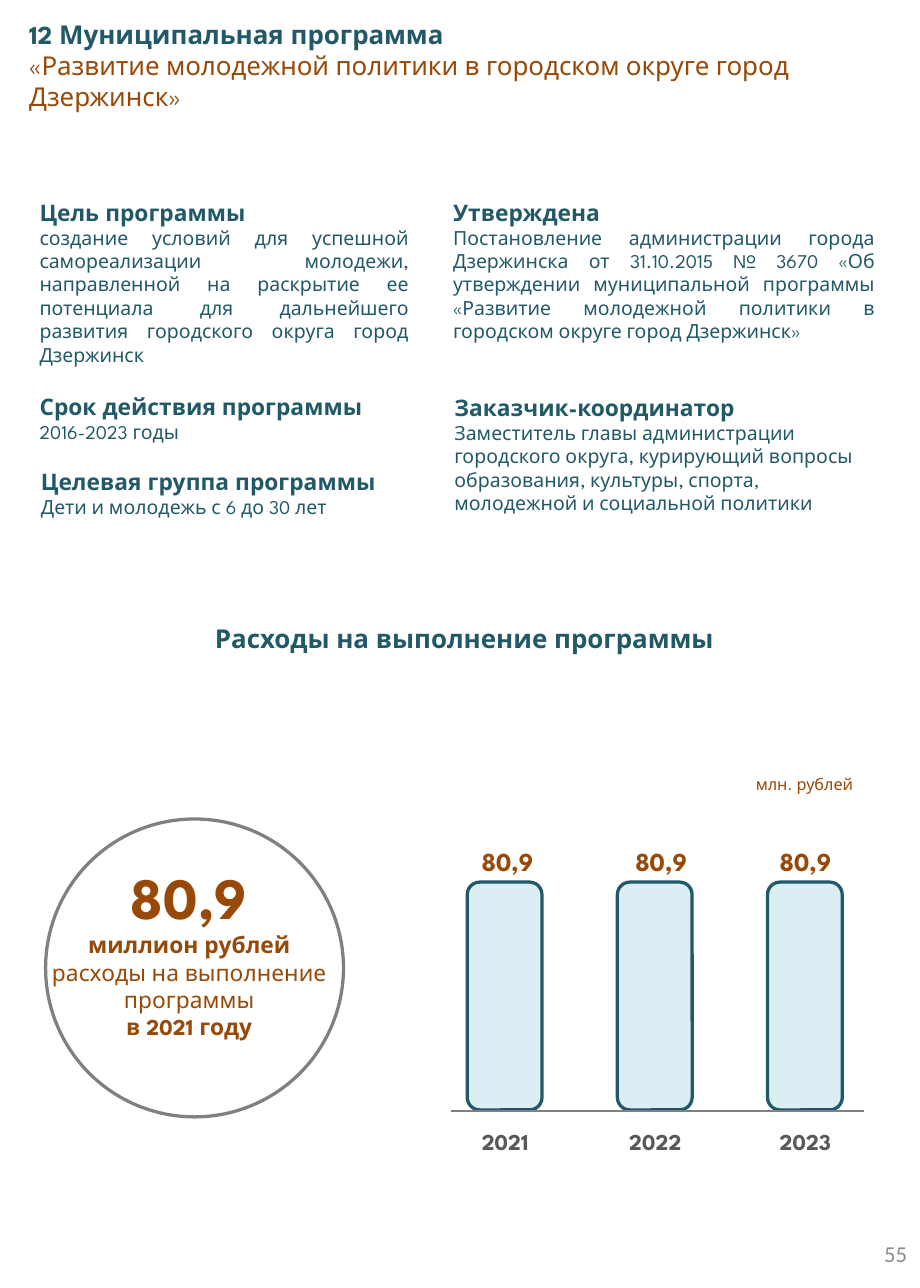
from pptx import Presentation
from pptx.dml.color import RGBColor
from pptx.enum.shapes import MSO_CONNECTOR, MSO_SHAPE
from pptx.enum.text import MSO_ANCHOR, PP_ALIGN
from pptx.oxml.ns import qn
from pptx.util import Inches, Pt

LEFT, CENTER, RIGHT, JUSTIFY = PP_ALIGN.LEFT, PP_ALIGN.CENTER, PP_ALIGN.RIGHT, PP_ALIGN.JUSTIFY
TOP, MIDDLE = MSO_ANCHOR.TOP, MSO_ANCHOR.MIDDLE
OVAL, ROUNDED = MSO_SHAPE.OVAL, MSO_SHAPE.ROUNDED_RECTANGLE
STRAIGHT = MSO_CONNECTOR.STRAIGHT

SLIDE_WIDTH, SLIDE_HEIGHT = Pt(567), Pt(793.75)
TEAL, BROWN, GRAY, DARK_GRAY, PALE = "215968", "984807", "808080", "595959", "DBEEF4"
PAGE_GRAY = "8C8C8C"
HEADING_FONT, PAGE_FONT = "League Spartan", "Calibri"
NARROW, WIDE = (0.1, 0.05), (0.11, 0.06)
LEFT_COLUMN, RIGHT_COLUMN = 0.24, 3.78
UPPER_ROW, LOWER_ROW, GROUP_ROW = 1.65, 3.31, 3.94


def color(hex_value):
    return RGBColor.from_string(hex_value)


def add_text(slide, box, lines, align=LEFT, insets=NARROW, anchor=TOP, font=HEADING_FONT):
    """Each line is (text, size, color, bold)."""
    shape = slide.shapes.add_textbox(*map(Inches, box))
    frame = shape.text_frame
    frame.word_wrap = True
    frame.vertical_anchor = anchor
    frame.margin_left = frame.margin_right = Inches(insets[0])
    frame.margin_top = frame.margin_bottom = Inches(insets[1])
    for index, (text, size, hex_value, bold) in enumerate(lines):
        paragraph = frame.add_paragraph() if index else frame.paragraphs[0]
        paragraph.text = text
        paragraph.alignment = align
        paragraph.font.name = font
        paragraph.font.size = Pt(size)
        paragraph.font.bold = bold
        paragraph.font.color.rgb = color(hex_value)


def add_outlined(slide, kind, box, line, fill=None):
    shape = slide.shapes.add_shape(kind, *map(Inches, box))
    shape.shadow.inherit = False
    if fill:
        shape.fill.solid()
        shape.fill.fore_color.rgb = color(fill)
    else:
        shape.fill.background()
    shape.line.color.rgb = color(line)
    shape.line.width = Pt(2)


def add_section(slide, box, heading, body, align=LEFT, insets=NARROW):
    add_text(slide, box, [(heading, 14, TEAL, True), (body, 12, TEAL, False)], align, insets)


def add_program_details(slide):
    add_section(slide, (LEFT_COLUMN, UPPER_ROW, 3.36, 1.55), "Цель программы",
                "создание условий для успешной самореализации молодежи, направленной "
                "на раскрытие ее потенциала для дальнейшего развития городского округа "
                "город Дзержинск", JUSTIFY)
    add_section(slide, (RIGHT_COLUMN, UPPER_ROW, 3.81, 1.35), "Утверждена",
                "Постановление администрации города Дзержинска от 31.10.2015 № 3670 "
                "«Об утверждении муниципальной программы «Развитие молодежной политики "
                "в городском округе город Дзержинск»", JUSTIFY)
    add_section(slide, (LEFT_COLUMN, LOWER_ROW, 2.96, 0.54), "Срок действия программы",
                "2016-2023 годы", JUSTIFY)
    add_section(slide, (RIGHT_COLUMN, LOWER_ROW, 3.86, 1.02), "Заказчик-координатор",
                "Заместитель главы администрации городского округа, курирующий вопросы "
                "образования, культуры, спорта, молодежной и социальной политики",
                insets=WIDE)
    add_section(slide, (LEFT_COLUMN, GROUP_ROW, 3.23, 0.55), "Целевая группа программы",
                "Дети и молодежь с 6 до 30 лет", insets=WIDE)


def add_total(slide, left, top, diameter):
    add_outlined(slide, OVAL, (left, top, diameter, diameter), GRAY)
    add_text(slide, (left - 0.39, top + 0.31, diameter + 0.69, 1.7), [
        ("80,9", 36, BROWN, True),
        ("миллион рублей", 14, BROWN, True),
        ("расходы на выполнение программы", 14, BROWN, False),
        ("в 2021 году", 14, BROWN, True),
    ], CENTER)


def add_spending_bars(slide, left, top, width, height):
    """The box spans the axis line and the full bar height."""
    bar_width, label_width = 0.64, 0.81
    years = [("2021", "80,9", 0.02), ("2022", "80,9", 0.05), ("2023", "80,9", 0)]
    pitch = 2.57 / (len(years) - 1)
    for index, (year, value, value_shift) in enumerate(years):
        bar_left = left + 0.14 + index * pitch
        label_left = bar_left - 0.08
        add_outlined(slide, ROUNDED, (bar_left, top, bar_width, height), TEAL, PALE)
        add_text(slide, (label_left + value_shift, top - 0.36, label_width, 0.37),
                 [(value, 16, BROWN, True)], CENTER)
        add_text(slide, (label_left, top + height + 0.1, label_width, 0.34),
                 [(year, 14, DARK_GRAY, True)], CENTER)

    # Axis
    base = top + height + 0.01
    axis = slide.shapes.add_connector(
        STRAIGHT, *map(Inches, (left, base, left + width, base)))
    axis.line.color.rgb = color(GRAY)
    axis.line.width = Pt(0.75)
    properties = axis._element.spPr
    properties.append(properties.makeelement(qn("a:effectLst"), {}))

    # Unit
    add_text(slide, (left + width - 2.18, top - 0.97, 2.18, 0.27),
             [("млн. рублей", 10, BROWN, False)], RIGHT)


def main():
    presentation = Presentation()
    presentation.slide_width = SLIDE_WIDTH
    presentation.slide_height = SLIDE_HEIGHT
    slide = presentation.slides.add_slide(presentation.slide_layouts[6])

    # Title
    add_text(slide, (0.14, 0.1, 7.68, 0.92), [
        ("12 Муниципальная программа", 16, TEAL, True),
        ("«Развитие молодежной политики в городском округе город Дзержинск»",
         16, BROWN, False),
    ], insets=WIDE)
    add_program_details(slide)

    # Spending
    add_text(slide, (1.73, 5.28, 4.49, 0.37),
             [("Расходы на выполнение программы", 16, TEAL, True)], CENTER)
    add_total(slide, 0.39, 7.01, 2.55)
    add_spending_bars(slide, 3.86, 7.55, 3.54, 1.95)

    # Page number
    add_text(slide, (SLIDE_WIDTH.inches - 1.84, SLIDE_HEIGHT.inches - 0.59, 1.84, 0.59),
             [("55", 14, PAGE_GRAY, False)], RIGHT, WIDE, MIDDLE, PAGE_FONT)
    presentation.save("out.pptx")


if __name__ == "__main__":
    main()
